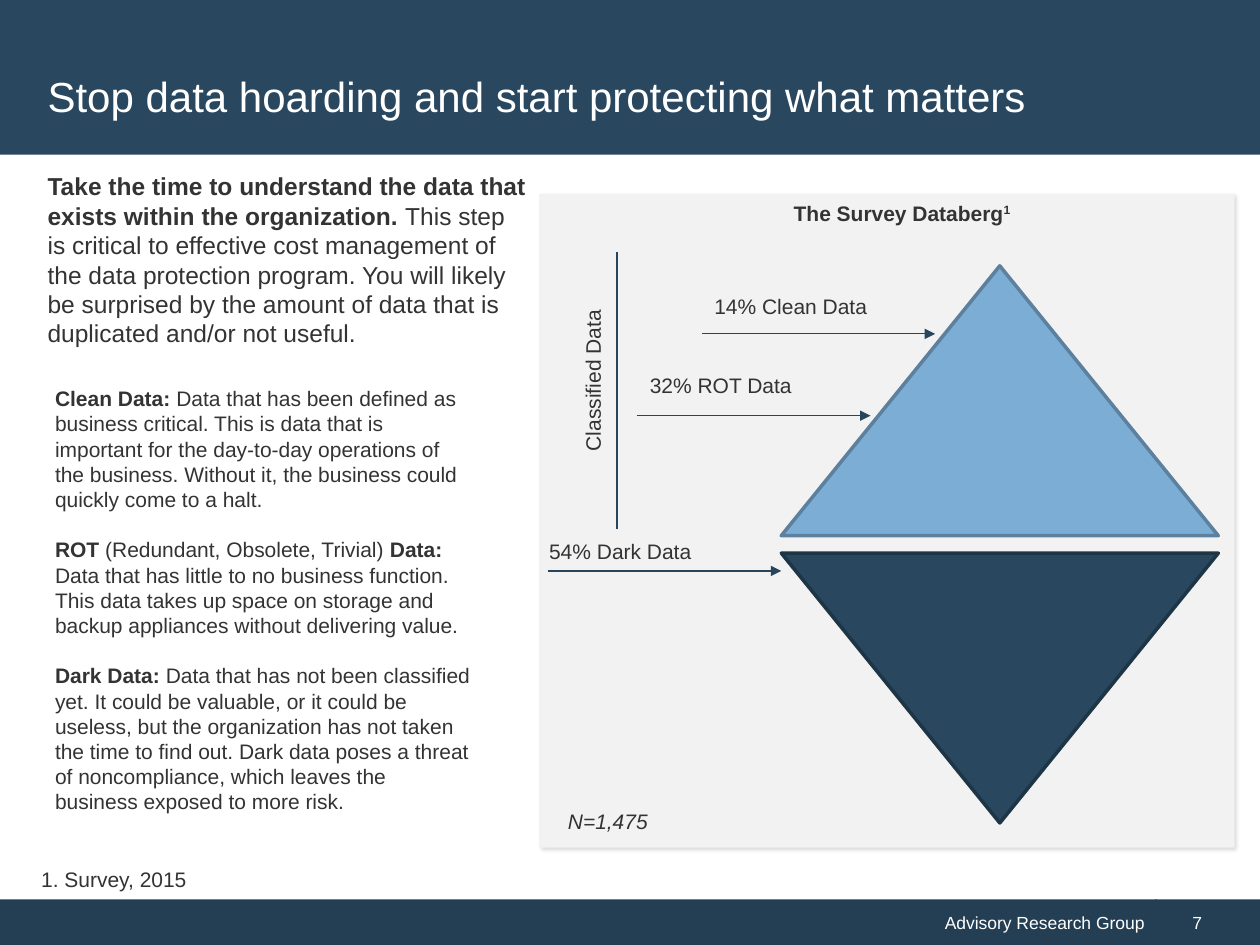
from lxml.etree import SubElement
from pptx import Presentation
from pptx.dml.color import RGBColor
from pptx.enum.shapes import MSO_CONNECTOR, MSO_SHAPE
from pptx.enum.text import MSO_ANCHOR, PP_ALIGN
from pptx.oxml.ns import qn
from pptx.util import Cm, Pt

NAVY, FOOTER, TEXT, LINE = "29475F", "243F54", "333333", "27465E"
BODY = {"size": 12, "color": TEXT}
WHITE_TEXT = {"size": 10, "color": "FFFFFF"}


def rgb(value):
    return RGBColor.from_string(value)


def fill_text(sp, paragraphs, fmt, align=PP_ALIGN.LEFT, gap=0, **frame):
    """Write paragraphs, each a list of (text, font attributes) runs."""
    tf = sp.text_frame
    tf.word_wrap = True
    for name, value in frame.items():
        setattr(tf, name, value)
    for i, runs in enumerate(paragraphs):
        p = tf.paragraphs[0] if i == 0 else tf.add_paragraph()
        p.alignment = align
        p.line_spacing = Pt(1.2 * fmt["size"])
        p.space_before = Pt(gap if i else 0)
        for text, attrs in runs:
            r = p.add_run()
            r.text = text
            r.font.color.rgb = rgb(fmt["color"])
            values = {"name": "Arial", "size": Pt(fmt["size"]), **attrs}
            for name, value in values.items():
                setattr(r.font, name, value)


def add_text(s, x, y, w, h, paragraphs, fmt=BODY, **options):
    sp = s.shapes.add_textbox(Cm(x), Cm(y), Cm(w), Cm(h))
    fill_text(sp, paragraphs, fmt, **options)
    return sp


def add_block(s, x, y, w, h, color, kind=MSO_SHAPE.RECTANGLE, line=None):
    sp = s.shapes.add_shape(kind, Cm(x), Cm(y), Cm(w), Cm(h))
    sp.shadow.inherit = False
    sp.fill.solid()
    sp.fill.fore_color.rgb = rgb(color)
    if line:
        sp.line.color.rgb = rgb(line)
        sp.line.width = Pt(2)
    else:
        sp.line.fill.background()
    return sp


def add_soft_shadow(sp):
    effects = sp.element.spPr.find(qn("a:effectLst"))
    shadow = SubElement(effects, qn("a:outerShdw"), blurRad=str(Pt(2)),
                        dist=str(Pt(2)), dir="2700000", algn="tl", rotWithShape="0")
    color = SubElement(shadow, qn("a:srgbClr"), val="000000")
    SubElement(color, qn("a:alpha"), val="14000")


def add_line(s, x1, y1, x2, y2, arrow=False):
    c = s.shapes.add_connector(MSO_CONNECTOR.STRAIGHT, Cm(x1), Cm(y1), Cm(x2), Cm(y2))
    c.line.color.rgb = rgb(LINE)
    c.line.width = Pt(0.75)
    if arrow:
        SubElement(c.line._get_or_add_ln(), qn("a:tailEnd"), type="triangle")
    SubElement(c.element.spPr, qn("a:effectLst"))


def add_frame(s):
    """Title band and footer."""
    add_block(s, 0, 0, 25.4, 3.12, NAVY)
    add_text(s, 0.71, 0.71, 23.95, 2.44,
             [[("Stop data hoarding and start protecting what matters", {})]],
             {"size": 24, "color": "FFFFFF"}, vertical_anchor=MSO_ANCHOR.MIDDLE)
    name = add_block(s, 0, 18.13, 23.32, 0.93, FOOTER)
    fill_text(name, [[("Advisory Research Group", {})]], WHITE_TEXT,
              align=PP_ALIGN.RIGHT, vertical_anchor=MSO_ANCHOR.MIDDLE)
    number = add_block(s, 23.28, 18.13, 2.12, 0.93, FOOTER)
    fill_text(number, [[("7", {})]], WHITE_TEXT,
              margin_left=Cm(0.76), vertical_anchor=MSO_ANCHOR.MIDDLE)


def add_definitions(s):
    bold = {"bold": True}
    add_text(s, 0.71, 3.33, 10.16, 3.84, [[
        ("Take the time to understand the data that exists within the organization. ", bold),
        ("This step is critical to effective cost management of the data protection "
         "program. You will likely be surprised by the amount of data that is "
         "duplicated and/or not useful.", {}),
    ]], {"size": 14, "color": TEXT})
    add_text(s, 0.86, 7.65, 8.94, 8.99, [
        [("Clean Data:", bold),
         (" Data that has been defined as business critical. This is data that is "
          "important for the day-to-day operations of the business. Without it, the "
          "business could quickly come to a halt.", {})],
        [("ROT ", bold), ("(Redundant, Obsolete, Trivial) ", {}), ("Data: ", bold),
         ("Data that has little to no business function. This data takes up space on "
          "storage and backup appliances without delivering value.", {})],
        [("Dark Data: ", bold),
         ("Data that has not been classified yet. It could be valuable, or it could be "
          "useless, but the organization has not taken the time to find out. Dark data "
          "poses a threat of noncompliance, which leaves the business exposed to more "
          "risk.", {})],
    ], gap=14.4)
    add_text(s, 0.58, 17.35, 5.51, 0.76, [[("1. Survey, 2015", {})]])


def add_databerg(s):
    add_soft_shadow(add_block(s, 10.87, 3.91, 14.02, 13.18, "F2F2F2"))
    add_text(s, 15.75, 3.91, 8.38, 0.76, [[
        ("The Survey Databerg", {"bold": True}),
        ("1", {"bold": True}),
    ]]).text_frame.paragraphs[0].runs[1].font._element.set("baseline", "30000")

    triangle = MSO_SHAPE.ISOSCELES_TRIANGLE
    add_block(s, 15.75, 5.36, 8.81, 5.44, "7CADD4", triangle, "5C809D")
    add_block(s, 15.75, 11.15, 8.81, 5.44, NAVY, triangle, "1E3546").rotation = 180

    for label, x, y, arrow_x, arrow_y in (
        ("14% Clean Data", 14.15, 5.79, 14.15, 6.73),
        ("32% ROT Data", 12.85, 7.39, 12.85, 8.38),
        ("54% Dark Data", 10.82, 10.74, 11.05, 11.51),
    ):
        add_text(s, x, y, 4.06, 0.76, [[(label, {})]])
        add_line(s, arrow_x, arrow_y, arrow_x + 4.7, arrow_y, arrow=True)

    add_line(s, 12.44, 10.67, 12.44, 5.08)
    add_text(s, 10.19, 7.21, 3.51, 0.76, [[("Classified Data", {})]]).rotation = 270
    add_text(s, 11.2, 16.18, 2.26, 0.76, [[("N=1,475", {"italic": True})]])


def main():
    prs = Presentation()
    prs.slide_width, prs.slide_height = Cm(25.4), Cm(19.05)
    s = prs.slides.add_slide(prs.slide_layouts[6])
    add_frame(s)
    add_definitions(s)
    add_databerg(s)
    prs.save("out.pptx")


if __name__ == "__main__":
    main()
